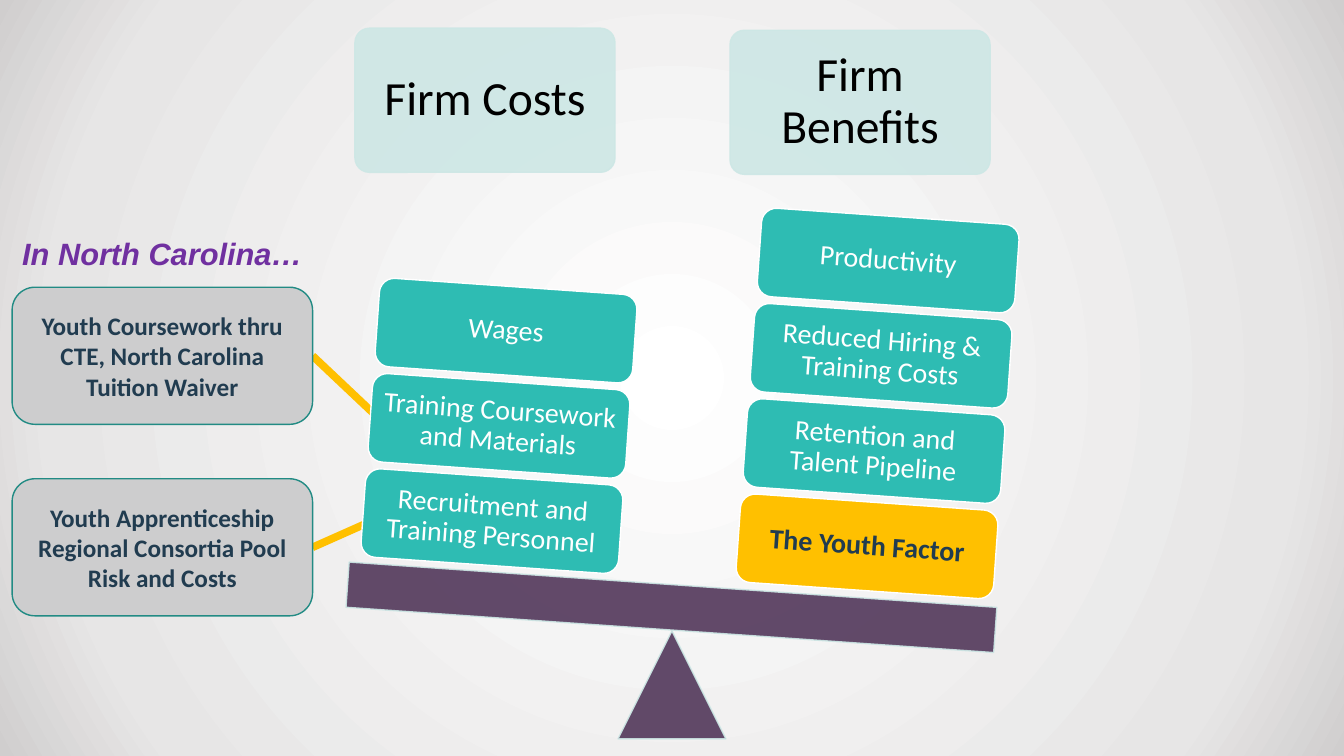
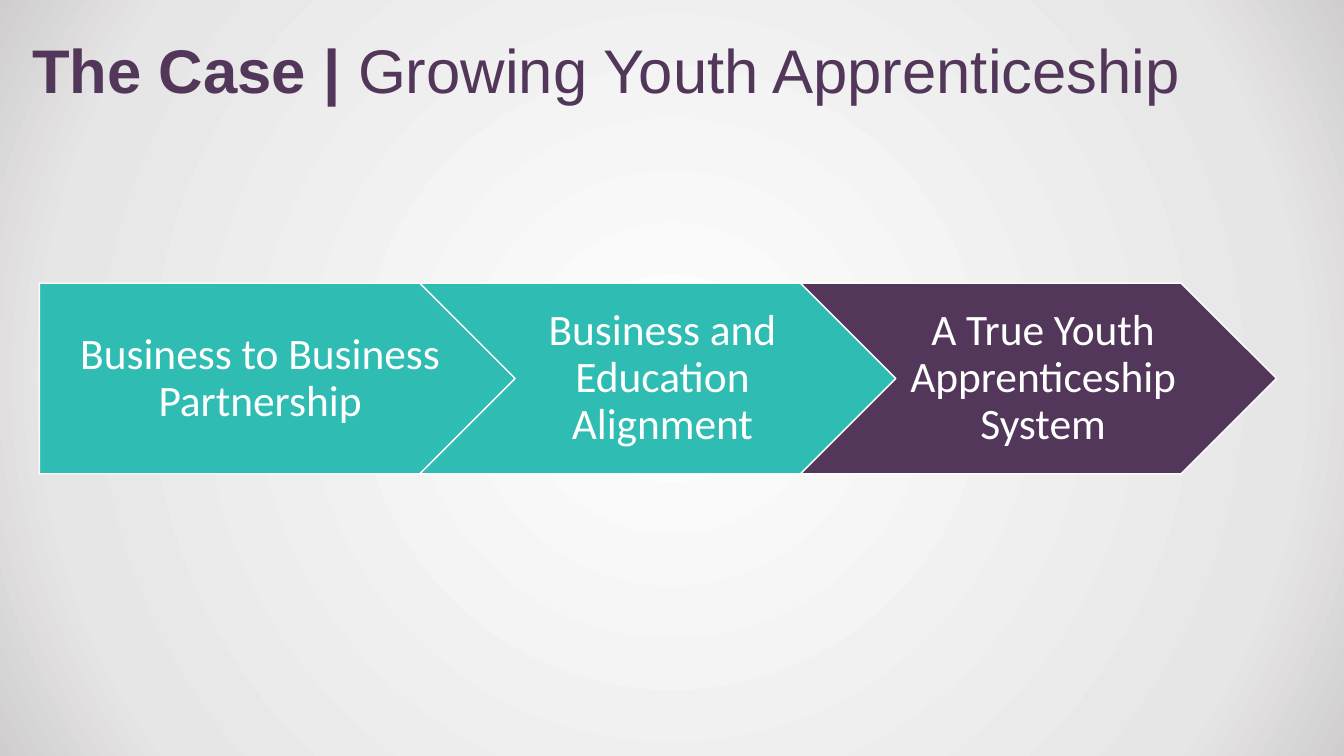
import pptx
import pptx.util
import pptx.oxml
import pptx.oxml.ns
import pptx.dml.color
import pptx.enum.shapes
import pptx.enum.text

Inches = pptx.util.Inches
Pt = pptx.util.Pt
Shape = pptx.enum.shapes.MSO_SHAPE
Align = pptx.enum.text.PP_ALIGN
Anchor = pptx.enum.text.MSO_ANCHOR
qn = pptx.oxml.ns.qn

COLORS = {
    "white": "FFFFFF",
    "black": "000000",
    "mid_gray": "E7E6E6",
    "edge_gray": "D0CECE",
    "card_gray": "CDCDCE",
    "pale_teal": "CDE7E5",
    "teal": "2EBCB3",
    "dark_teal": "228B84",
    "plum": "52375A",
    "violet": "7030A0",
    "gold": "FFC000",
    "navy": "213C50",
}
HEADING_FONT = "Arial"
BODY_FONT = "Calibri"
TILT = 4


def rgb(name):
    return pptx.dml.color.RGBColor.from_string(COLORS[name])


def add_effect_free(connector):
    """Add an empty effect list, so that the connector casts no shadow."""
    properties = connector._element.spPr
    properties.append(properties.makeelement(qn("a:effectLst"), {}))


class SlideBuilder:
    def __init__(self):
        self.deck = pptx.Presentation()
        self.deck.slide_width = Inches(13.33)
        self.deck.slide_height = Inches(7.5)
        self.page = None
        self.set_background()

    def set_background(self):
        """Give the master a radial gradient that every slide inherits."""
        master = self.deck.slide_master
        master.background.fill.gradient()
        gradient = master.element.find(".//" + qn("a:gradFill"))
        stops = [(0, "white"), (81, "mid_gray"), (100, "edge_gray")]
        stop_xml = "".join(
            f'<a:gs pos="{percent * 1000}"><a:srgbClr val="{COLORS[name]}"/></a:gs>'
            for percent, name in stops
        )
        radial = pptx.oxml.parse_xml(
            f'<a:gradFill {pptx.oxml.ns.nsdecls("a")} rotWithShape="1">'
            f"<a:gsLst>{stop_xml}</a:gsLst>"
            '<a:path path="circle">'
            '<a:fillToRect l="50000" t="50000" r="50000" b="50000"/>'
            "</a:path></a:gradFill>"
        )
        gradient.getparent().replace(gradient, radial)

    def new_page(self):
        self.page = self.deck.slides.add_slide(self.deck.slide_layouts[5])

    def style_text(self, box, font, size, color, bold=False, align=Align.CENTER,
                   spacing=0.9):
        frame = box.text_frame
        frame.word_wrap = True
        frame.vertical_anchor = Anchor.MIDDLE
        for para in frame.paragraphs:
            para.alignment = align
            para.line_spacing = spacing
            for span in para.runs:
                span.font.name = font
                span.font.size = Pt(size)
                span.font.bold = bold
                span.font.color.rgb = rgb(color)

    def title(self, text, left, top, width, size, color):
        box = self.page.shapes.title
        box.left, box.top = Inches(left), Inches(top)
        box.width, box.height = Inches(width), Inches(1.45)
        box.text_frame.text = text
        box.text_frame.auto_size = pptx.enum.text.MSO_AUTO_SIZE.NONE
        self.style_text(box, HEADING_FONT, size, color, bold=True, align=Align.LEFT)
        return box.text_frame.paragraphs[0]

    def shape(self, kind, left, top, width, height, fill, line="white", opacity=100):
        shape = self.page.shapes.add_shape(
            kind, Inches(left), Inches(top), Inches(width), Inches(height))
        shape.shadow.inherit = False
        shape.fill.solid()
        shape.fill.fore_color.rgb = rgb(fill)
        shape.line.color.rgb = rgb(line)
        shape.line.width = Pt(1)
        if opacity < 100:
            for color in shape._element.spPr.iter(qn("a:srgbClr")):
                alpha = color.makeelement(qn("a:alpha"), {"val": str(opacity * 1000)})
                color.append(alpha)
        return shape

    def label(self, shape, text, size, color="white", margins=(0.08,) * 4, **style):
        """Write text in a shape; margins run left, top, right, bottom."""
        frame = shape.text_frame
        frame.text = text
        frame.margin_left, frame.margin_top, frame.margin_right, frame.margin_bottom = (
            Inches(margin) for margin in margins)
        self.style_text(shape, BODY_FONT, size, color, **style)

    def pan_heading(self, text, left, top):
        shape = self.shape(Shape.ROUNDED_RECTANGLE, left, top, 2.58, 1.43,
                           "pale_teal", "pale_teal", 90)
        shape.adjustments[0] = 0.1
        self.label(shape, text, 34, "black", (0.14,) * 4)

    def weight_stack(self, left, top, labels):
        """Stack tilted weights upwards from the lowest one at left, top."""
        for level, text in enumerate(labels):
            special = text == "The Youth Factor"
            block = self.shape(Shape.ROUNDED_RECTANGLE, left + 0.07 * level,
                               top - 0.945 * level, 2.56, 0.88,
                               "gold" if special else "teal")
            block.rotation = TILT
            self.label(block, text, 20, "navy" if special else "white", bold=special)

    def card_with_link(self, text, top, target):
        """Draw a card on the left and a gold line from it to the target point."""
        left, width, height = 0.12, 2.98, 1.36
        link = self.page.shapes.add_connector(
            pptx.enum.shapes.MSO_CONNECTOR.STRAIGHT,
            Inches(left + width), Inches(top + height / 2),
            Inches(target[0]), Inches(target[1]))
        link.line.color.rgb = rgb("gold")
        link.line.width = Pt(5.5)
        add_effect_free(link)
        card = self.shape(Shape.ROUNDED_RECTANGLE, left, top, width, height,
                          "card_gray", "dark_teal")
        self.label(card, text, 18, "navy", (0.1, 0.05, 0.1, 0.05), bold=True, spacing=1)
        link.begin_connect(card, 3)

    def balance(self):
        self.shape(Shape.ISOSCELES_TRIANGLE, 6.13, 6.26, 1.07, 1.07,
                   "plum", "pale_teal", 90)
        beam = self.shape(Shape.RECTANGLE, 3.44, 5.8, 6.44, 0.45,
                          "plum", "pale_teal", 90)
        beam.rotation = TILT

    def arrow_steps(self, steps):
        for index, (text, fill) in enumerate(steps):
            kind = Shape.CHEVRON if index else Shape.PENTAGON
            arrow = self.shape(kind, 0.39 + 3.775 * index, 2.81, 4.72, 1.89, fill)
            left_margin = 0.14 if index else 0.18
            self.label(arrow, text, 31, margins=(left_margin, 0.09, 0.05, 0.09))


def build_balance_slide(builder):
    builder.new_page()
    heading = builder.title("In North Carolina…", 0.12, 1.81, 11.93, 22, "violet")
    heading.runs[0].font.italic = True
    builder.card_with_link("Youth Coursework thru CTE, North Carolina Tuition Waiver",
                           2.85, (3.82, 4.21))
    builder.card_with_link("Youth Apprenticeship Regional Consortia Pool Risk and Costs",
                           4.75, (3.82, 5.11))
    builder.pan_heading("Firm Costs", 3.52, 0.28)
    builder.pan_heading("Firm Benefits", 7.24, 0.3)
    builder.balance()
    builder.weight_stack(7.32, 4.98, [
        "The Youth Factor",
        "Retention and Talent Pipeline",
        "Reduced Hiring & Training Costs",
        "Productivity",
    ])
    builder.weight_stack(3.6, 4.73, [
        "Recruitment and Training Personnel",
        "Training Coursework and Materials",
        "Wages",
    ])


def build_case_slide(builder):
    builder.new_page()
    heading = builder.title("The Case | ", 0.22, 0, 13.11, 44, "plum")
    span = heading.add_run()
    span.text = "Growing Youth Apprenticeship"
    span.font.name = HEADING_FONT
    span.font.size = Pt(44)
    span.font.bold = False
    span.font.color.rgb = rgb("plum")
    builder.arrow_steps([
        ("Business to Business Partnership", "teal"),
        ("Business and Education Alignment", "teal"),
        ("A True Youth Apprenticeship System", "plum"),
    ])


def main():
    builder = SlideBuilder()
    build_balance_slide(builder)
    build_case_slide(builder)
    builder.deck.save("out.pptx")


if __name__ == "__main__":
    main()
